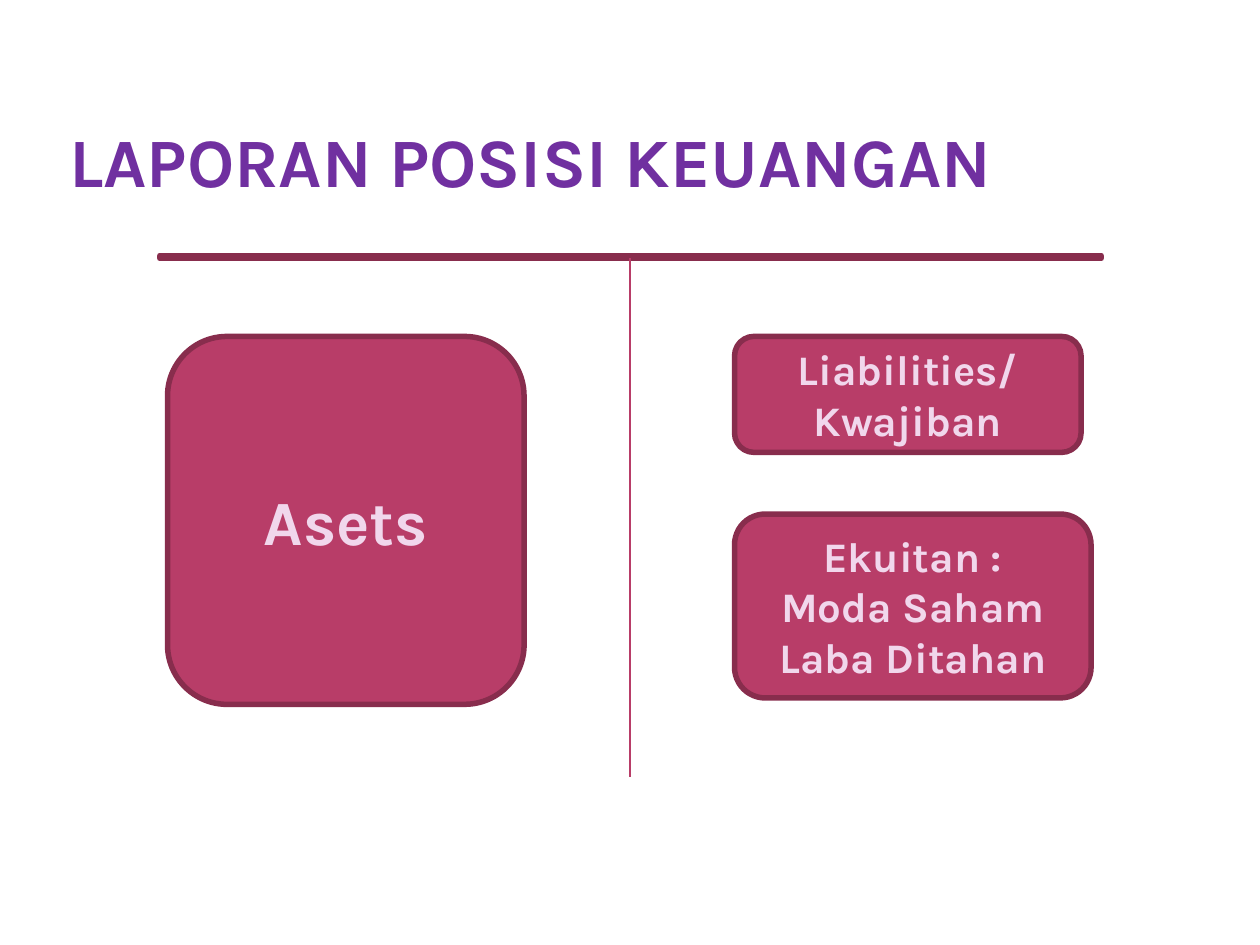
from dataclasses import dataclass

import pptx
import pptx.dml.color
import pptx.enum.shapes
import pptx.enum.text
import pptx.oxml
import pptx.oxml.ns
import pptx.util
from pptx.util import Inches

FONT = "Karla"
PURPLE, ROSE, DARK_ROSE, PALE_PINK = "7030A0", "B83D68", "882D4D", "F1D7EC"
Shapes = pptx.enum.shapes.MSO_SHAPE
Anchor = pptx.enum.text.MSO_ANCHOR
Align = pptx.enum.text.PP_ALIGN


@dataclass
class Account:
    left: float
    top: float
    width: float
    height: float
    lines: list[str]
    size: float = 24


ACCOUNTS = [
    Account(1.33, 2.67, 2.83, 2.92, ["Asets"], 36),
    Account(5.83, 2.67, 2.75, 0.92, ["Liabilities/", "Kwajiban"]),
    Account(5.83, 4.08, 2.83, 1.46, ["Ekuitan :", "Moda Saham", "Laba Ditahan"]),
]


def color(value: str) -> pptx.dml.color.RGBColor:
    return pptx.dml.color.RGBColor.from_string(value)


def write_text(box, lines: list[str], *, size: float, ink: str, align, anchor) -> None:
    frame = box.text_frame
    frame.word_wrap = True
    frame.auto_size = pptx.enum.text.MSO_AUTO_SIZE.NONE
    frame.vertical_anchor = anchor
    for index, line in enumerate(lines):
        para = frame.add_paragraph() if index else frame.paragraphs[0]
        para.alignment = align
        span = para.add_run()
        span.text = line
        span.font.name = FONT
        span.font.size = pptx.util.Pt(size)
        span.font.bold = True
        span.font.color.rgb = color(ink)


def add_rose_shape(page, kind, left: float, top: float, width: float, height: float):
    shape = page.shapes.add_shape(
        kind, Inches(left), Inches(top), Inches(width), Inches(height))
    shape.shadow.inherit = False
    shape.fill.solid()
    shape.fill.fore_color.rgb = color(ROSE)
    shape.line.color.rgb = color(DARK_ROSE)
    shape.line.width = pptx.util.Pt(3.15)
    return shape


def add_title(page, text: str) -> None:
    title = page.shapes.title
    title.left, title.top = Inches(0.5), Inches(0.35)
    title.width, title.height = Inches(7.92), Inches(1.25)
    frame = title.text_frame
    frame.margin_left = frame.margin_right = Inches(0.05)
    frame.margin_top = frame.margin_bottom = 0
    write_text(title, [text], size=39.6, ink=PURPLE,
               align=Align.LEFT, anchor=Anchor.BOTTOM)


def add_divider(page, x: float, top: float, bottom: float) -> None:
    divider = page.shapes.add_connector(
        pptx.enum.shapes.MSO_CONNECTOR.STRAIGHT,
        Inches(x), Inches(top), Inches(x), Inches(bottom))
    divider.line.color.rgb = color(ROSE)
    divider.line.width = pptx.util.Pt(0.9)
    properties = divider._element.spPr
    properties.append(pptx.oxml.parse_xml(
        f"<a:effectLst {pptx.oxml.ns.nsdecls('a')}/>"))


def add_account(page, account: Account) -> None:
    box = add_rose_shape(page, Shapes.ROUNDED_RECTANGLE, account.left,
                         account.top, account.width, account.height)
    write_text(box, account.lines, size=account.size, ink=PALE_PINK,
               align=Align.CENTER, anchor=Anchor.MIDDLE)


def main() -> None:
    deck = pptx.Presentation()
    deck.slide_width, deck.slide_height = Inches(10), Inches(7.5)
    page = deck.slides.add_slide(deck.slide_layouts.get_by_name("Title Only"))
    page.background.fill.solid()
    page.background.fill.fore_color.rgb = color("FFFFFF")
    add_title(page, "LAPORAN POSISI KEUANGAN")
    add_rose_shape(page, Shapes.MATH_MINUS, -0.08, 2, 10.17, 0.08)
    add_divider(page, 5, 2.05, 6.17)
    for account in ACCOUNTS:
        add_account(page, account)
    deck.save("out.pptx")


if __name__ == "__main__":
    main()
